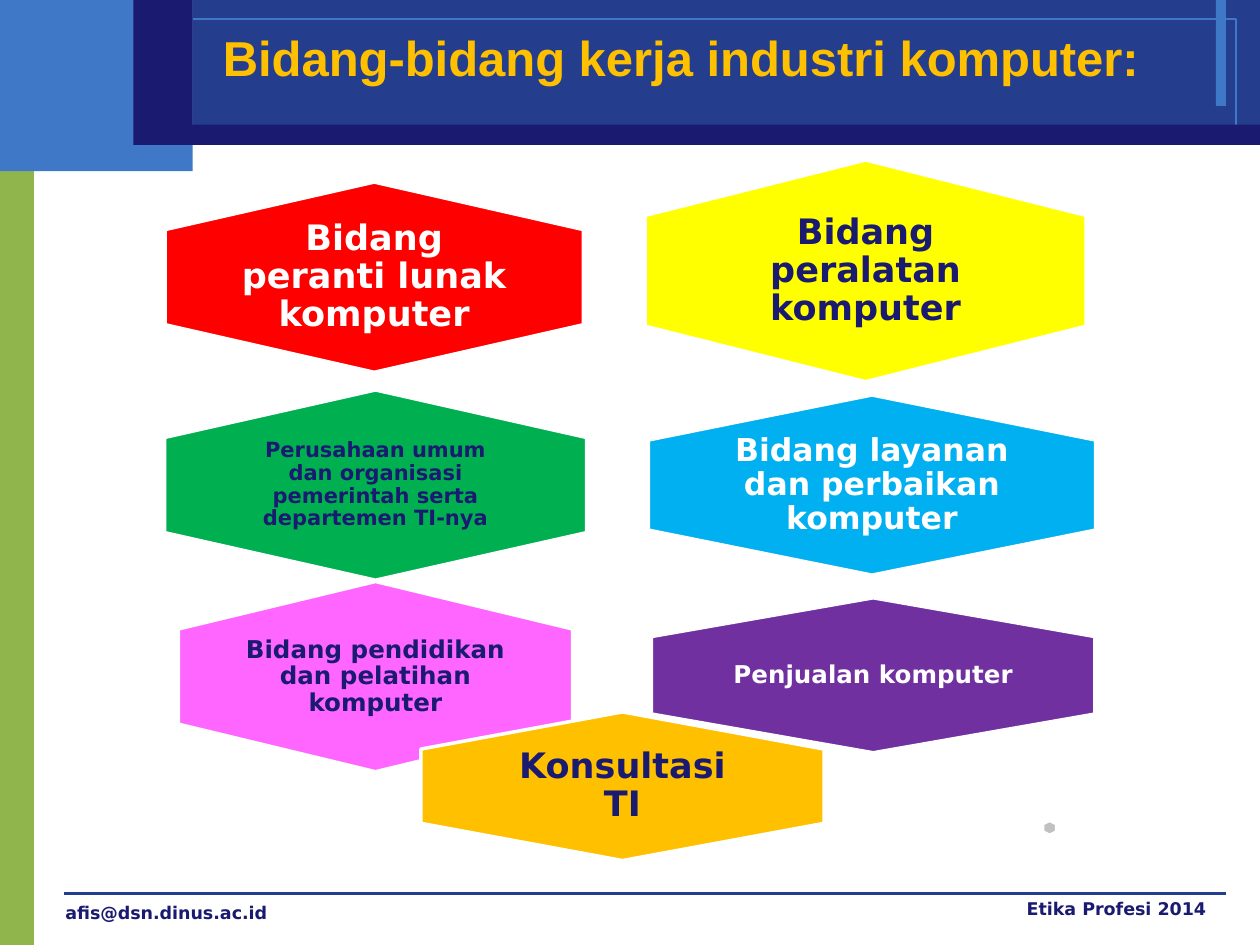
from pptx import Presentation
from pptx.dml.color import RGBColor
from pptx.enum.shapes import MSO_CONNECTOR, MSO_SHAPE
from pptx.enum.text import MSO_ANCHOR, PP_ALIGN
from pptx.oxml.ns import qn
from pptx.util import Inches, Pt
from lxml.etree import SubElement

NAVY, ROYAL, SKY = "1A1A70", "243D8C", "3E78C6"
GREEN, GOLD, WHITE = "90B54D", "FFC000", "FFFFFF"

# label, centre x, centre y, width, height, fill, text colour, text size, inset
FIELDS = [
    ("Bidang peralatan komputer", 6.87, 2.15, 3.5, 1.76, "FFFF00", NAVY, 20, 0.08),
    ("Bidang peranti lunak komputer", 2.97, 2.2, 3.32, 1.51, "FF0000", WHITE, 20, 0),
    ("Perusahaan umum dan organisasi pemerintah serta departemen TI-nya",
     2.98, 3.85, 3.35, 1.51, "00B050", NAVY, 12, 0.05),
    ("Bidang layanan dan perbaikan komputer",
     6.92, 3.85, 3.55, 1.43, "00B0F0", WHITE, 18, 0),
    ("Penjualan komputer", 6.93, 5.36, 3.52, 1.23, "7030A0", WHITE, 14, 0.06),
    ("Bidang pendidikan dan pelatihan komputer",
     2.98, 5.37, 3.13, 1.51, "FF66FF", NAVY, 14, 0),
    ("Konsultasi TI", 4.94, 6.24, 3.2, 1.18, GOLD, NAVY, 20, 0.08),
]


def rgb(value):
    return RGBColor.from_string(value)


class SlideBuilder:
    """Holds the text style and the slide being drawn."""

    font = "DejaVu Sans"
    title_font = "Arial"

    def __init__(self, slide):
        self.slide = slide

    def shape(self, kind, left, top, width, height, fill=None, line=None, weight=0):
        item = self.slide.shapes.add_shape(
            kind, Inches(left), Inches(top), Inches(width), Inches(height))
        item.shadow.inherit = False
        if fill:
            item.fill.solid()
            item.fill.fore_color.rgb = rgb(fill)
        else:
            item.fill.background()
        if line:
            item.line.color.rgb = rgb(line)
            item.line.width = Pt(weight)
        else:
            item.line.fill.background()
        return item

    def band(self, left, top, width, height, fill=None, line=None):
        self.shape(MSO_SHAPE.RECTANGLE, left, top, width, height, fill, line)

    def rule(self, x1, x2, y, color):
        line = self.slide.shapes.add_connector(
            MSO_CONNECTOR.STRAIGHT, Inches(x1), Inches(y), Inches(x2), Inches(y))
        line.line.color.rgb = rgb(color)
        line.line.width = Pt(0)
        SubElement(line._element.spPr, qn("a:effectLst"))

    def text(self, words, left, top, width, height, size, color,
             align=PP_ALIGN.LEFT, font=None):
        frame = self.slide.shapes.add_textbox(
            Inches(left), Inches(top), Inches(width), Inches(height)).text_frame
        frame.word_wrap = True
        frame.text = words
        paragraph = frame.paragraphs[0]
        paragraph.alignment = align
        style = paragraph.runs[0].font
        style.name = font or self.font
        style.size = Pt(size)
        style.bold = True
        style.color.rgb = rgb(color)
        return frame

    def hexagon(self, x, y, width, height, fill):
        """Draws a hexagon, pointing up and down, around the centre x, y."""
        item = self.shape(MSO_SHAPE.HEXAGON, x - height / 2, y - width / 2,
                          height, width, fill, WHITE, 2)
        item.rotation = 90
        item.adjustments[0] = 0.25

    def field(self, label, x, y, width, height, fill, color, size, inset):
        """Draws a hexagon with a label over its middle two thirds."""
        self.hexagon(x, y, width, height, fill)
        frame = self.text(label, x - width / 3, y - height / 3, width * 2 / 3,
                          height * 2 / 3, size, color, PP_ALIGN.CENTER)
        frame.vertical_anchor = MSO_ANCHOR.MIDDLE
        frame.margin_left = frame.margin_right = Inches(inset)
        frame.margin_top = frame.margin_bottom = Inches(inset)
        frame.paragraphs[0].line_spacing = 0.9


def main():
    deck = Presentation()
    deck.slide_width, deck.slide_height = Inches(10), Inches(7.5)
    page = SlideBuilder(deck.slides.add_slide(deck.slide_layouts[6]))

    page.band(0, 1.07, 0.27, 6.43, GREEN)
    page.band(0, 0, 1.53, 1.36, SKY)
    page.band(1.53, 0, 8.47, 1.15, ROYAL)
    page.band(9.65, 0, 0.08, 0.84, SKY)
    page.band(0.2, 0.15, 9.61, 0.85, line=SKY)
    page.rule(0.51, 9.73, 7.09, ROYAL)
    page.band(1.3, 0.99, 8.7, 0.16, NAVY)
    page.band(1.06, 0, 0.47, 1.15, NAVY)

    page.text("Bidang-bidang kerja industri komputer:", 1.67, 0.17, 7.96, 1.04,
              28, GOLD, font=page.title_font)
    for field in FIELDS:
        page.field(*field)
    page.hexagon(8.33, 6.57, 0.11, 0.12, "C0C0C0")

    page.text("afis@dsn.dinus.ac.id", 0.42, 7.11, 2.75, 0.25, 10, NAVY)
    page.text("Etika Profesi 2014", 7.67, 7.08, 2, 0.25, 10, NAVY, PP_ALIGN.RIGHT)

    deck.save("out.pptx")


if __name__ == "__main__":
    main()
